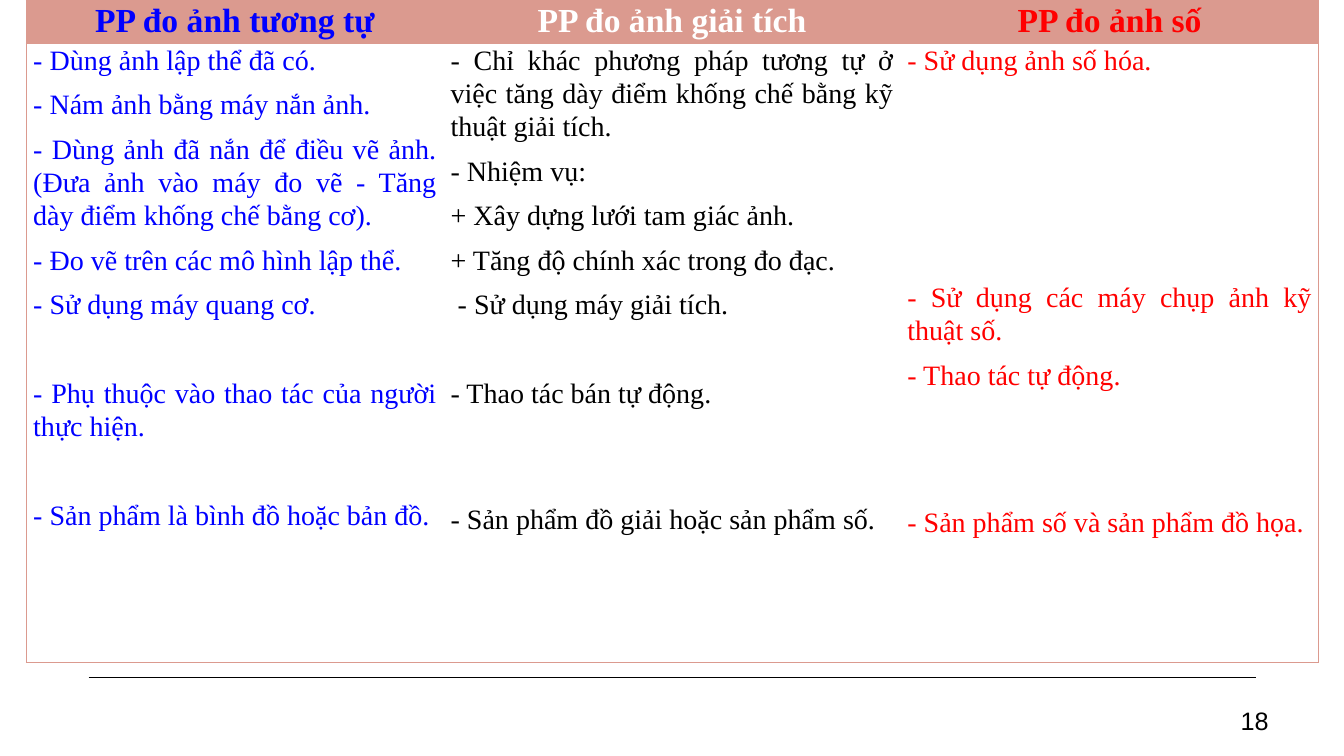
from lxml import etree
from pptx import Presentation
from pptx.dml.color import RGBColor
from pptx.enum.shapes import MSO_CONNECTOR
from pptx.enum.text import MSO_ANCHOR, PP_ALIGN
from pptx.oxml.ns import qn
from pptx.util import Inches, Pt

CENTER, JUSTIFY, RIGHT = PP_ALIGN.CENTER, PP_ALIGN.JUSTIFY, PP_ALIGN.RIGHT
MIDDLE = MSO_ANCHOR.MIDDLE
STRAIGHT = MSO_CONNECTOR.STRAIGHT

# Content: each entry is (text, points of extra space above, left indent in inches)
METHODS = [
    {"title": "PP đo ảnh tương tự", "title_color": "0000FF", "color": "0000FF",
     "width": 4.14, "points": [
         ("- Dùng ảnh lập thể đã có.", 0, 0),
         ("- Nám ảnh bằng máy nắn ảnh.", 0, 0),
         ("- Dùng ảnh đã nắn để điều vẽ ảnh. (Đưa ảnh vào máy đo vẽ - Tăng dày "
          "điểm khống chế bằng cơ).", 0, 0),
         ("- Đo vẽ trên các mô hình lập thể.", 0, 0),
         ("- Sử dụng máy quang cơ.", 0, 0),
         ("- Phụ thuộc vào thao tác của người thực hiện.", 31.7, 0),
         ("- Sản phẩm là bình đồ hoặc bản đồ.", 31.7, 0)]},
    {"title": "PP đo ảnh giải tích", "title_color": "FFFFFF", "color": "000000",
     "width": 4.53, "points": [
         ("- Chỉ khác phương pháp tương tự ở việc tăng dày điểm khống chế bằng "
          "kỹ thuật giải tích.", 0, 0),
         ("- Nhiệm vụ:", 0, 0),
         ("+ Xây dựng lưới tam giác ảnh.", 0, 0),
         ("+ Tăng độ chính xác trong đo đạc.", 0, 0),
         ("- Sử dụng máy giải tích.", 0, 0.07),
         ("- Thao tác bán tự động.", 31.7, 0),
         ("- Sản phẩm đồ giải hoặc sản phẩm số.", 58.3, 0)]},
    {"title": "PP đo ảnh số", "title_color": "FF0000", "color": "FF0000",
     "width": 4.15, "points": [
         ("- Sử dụng ảnh số hóa.", 0, 0),
         ("- Sử dụng các máy chụp ảnh kỹ thuật số.", 137.6, 0),
         ("- Thao tác tự động.", 0, 0),
         ("- Sản phẩm số và sản phẩm đồ họa.", 73.3, 0)]},
]
PAGE_NUMBER = "18"
ROW_HEIGHTS = [0.39, 6.14]
HEADER_COLOR = "DB9A8F"


def rgb(color):
    return RGBColor.from_string(color)


def write(paragraph, text, *, size, color, align, font="Times New Roman",
          bold=False, spacing=1.07, before=0, after=8, indent=0):
    run = paragraph.add_run()
    run.text = text
    run.font.name, run.font.size, run.font.bold = font, Pt(size), bold
    run.font.color.rgb = rgb(color)
    paragraph.alignment = align
    paragraph.line_spacing = spacing
    paragraph.space_before, paragraph.space_after = Pt(before), Pt(after)
    if indent:
        paragraph._p.get_or_add_pPr().set("marL", str(Inches(indent)))


def set_borders(cell, visible_sides):
    properties = cell._tc.get_or_add_tcPr()
    for position, side in enumerate("LRTB"):
        border = etree.Element(qn(f"a:ln{side}"), w=str(Pt(0.5)))
        if side in visible_sides:
            fill = etree.SubElement(border, qn("a:solidFill"))
            etree.SubElement(fill, qn("a:srgbClr"), val=HEADER_COLOR)
        else:
            etree.SubElement(border, qn("a:noFill"))
        properties.insert(position, border)


prs = Presentation()
prs.slide_width, prs.slide_height = Inches(13.33), Inches(7.5)
slide = prs.slides.add_slide(prs.slide_layouts[6])

# Footer rule
rule = slide.shapes.add_connector(STRAIGHT, Inches(0.88), Inches(6.72),
                                  Inches(12.46), Inches(6.72))
rule.line.color.rgb = rgb("000000")
rule.line.width = Pt(1)
etree.SubElement(rule._element.spPr, qn("a:effectLst"))

# Page number
page = slide.shapes.add_textbox(Inches(11.94), Inches(6.95), Inches(0.74), Inches(0.4))
page.text_frame.word_wrap = True
page.text_frame.vertical_anchor = MIDDLE
write(page.text_frame.paragraphs[0], PAGE_NUMBER, size=18, color="000000",
      align=RIGHT, font="Arial", spacing=1.0, after=0)

# Comparison table
table = slide.shapes.add_table(
    len(ROW_HEIGHTS), len(METHODS), Inches(0.26), Inches(0),
    Inches(sum(m["width"] for m in METHODS)), Inches(sum(ROW_HEIGHTS))).table
table.first_row = table.horz_banding = False
for row, height in zip(table.rows, ROW_HEIGHTS):
    row.height = Inches(height)

for col, method in enumerate(METHODS):
    table.columns[col].width = Inches(method["width"])
    header, body = table.cell(0, col), table.cell(1, col)
    outer = {0: "L", len(METHODS) - 1: "R"}.get(col, "")
    for cell, fill in ((header, HEADER_COLOR), (body, "FFFFFF")):
        cell.margin_left = cell.margin_right = Inches(0.07)
        cell.margin_top = cell.margin_bottom = 0
        cell.fill.solid()
        cell.fill.fore_color.rgb = rgb(fill)
        set_borders(cell, "TB" + outer)

    write(header.text_frame.paragraphs[0], method["title"], size=24, bold=True,
          color=method["title_color"], align=CENTER)
    for i, (text, before, indent) in enumerate(method["points"]):
        frame = body.text_frame
        paragraph = frame.add_paragraph() if i else frame.paragraphs[0]
        write(paragraph, text, size=20, color=method["color"], align=JUSTIFY,
              before=before, indent=indent)

prs.save("out.pptx")
